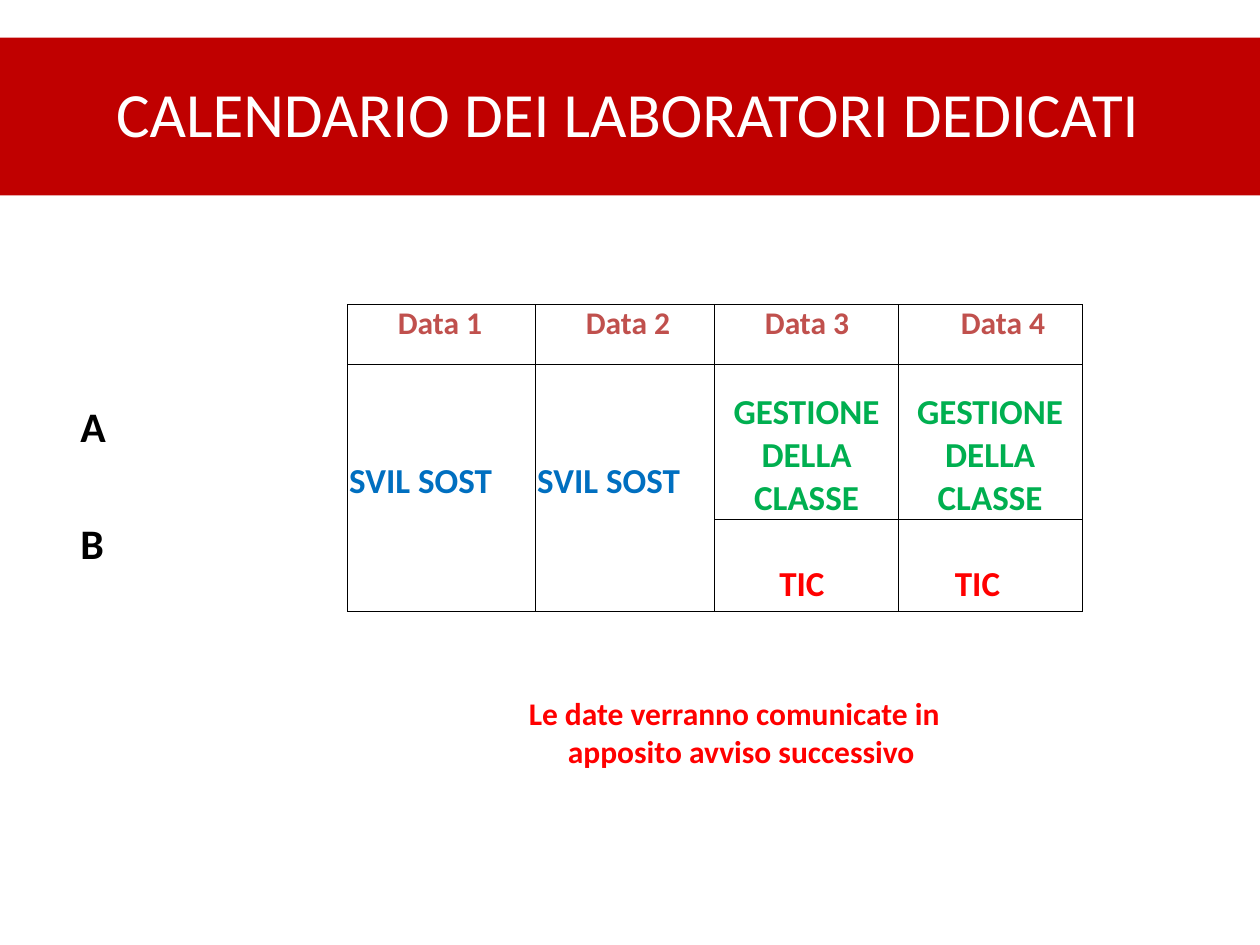
from dataclasses import dataclass

from lxml.etree import SubElement
from pptx import Presentation
from pptx.dml.color import RGBColor
from pptx.enum.shapes import MSO_SHAPE
from pptx.enum.text import MSO_ANCHOR, MSO_AUTO_SIZE, PP_ALIGN
from pptx.oxml.ns import qn
from pptx.table import Table, _Cell
from pptx.text.text import TextFrame
from pptx.util import Cm, Pt

DARK_RED = RGBColor(0xC0, 0x00, 0x00)
BRICK = RGBColor(0xC0, 0x50, 0x4D)
RED = RGBColor(0xFF, 0x00, 0x00)
BLUE = RGBColor(0x00, 0x6F, 0xC0)
GREEN = RGBColor(0x00, 0xAF, 0x50)
BLACK = RGBColor(0x00, 0x00, 0x00)
WHITE = RGBColor(0xFF, 0xFF, 0xFF)

PLAIN_TABLE_STYLE = "{2D5ABB26-0587-4C30-8999-92F81FD0307C}"
COLUMN_WIDTHS = (5.74, 3.79, 3.61, 3.7, 3.7)
ROW_HEIGHTS = (1.21, 1.78, 1.27, 1.85)


@dataclass(frozen=True)
class Entry:
    row: int
    column: int
    text: str
    size: int
    color: RGBColor
    left: float = 0
    top: float = 0
    rows: int = 1
    align: PP_ALIGN = PP_ALIGN.LEFT


ENTRIES = (
    Entry(0, 1, "Data 1", 18, BRICK, left=1.01),
    Entry(0, 2, "Data 2", 18, BRICK, left=1.01),
    Entry(0, 3, "Data 3", 18, BRICK, left=1.01),
    Entry(0, 4, "Data 4", 18, BRICK, left=1.26),
    Entry(1, 0, "A", 24, BLACK, left=0.35, top=0.76),
    Entry(3, 0, "B", 24, BLACK, left=0.35),
    *(Entry(1, column, "SVIL SOST", 20, BLUE, left=0.03, top=1.93, rows=3)
      for column in (1, 2)),
    *(Entry(1, column, "GESTIONE DELLA CLASSE", 20, GREEN, top=0.53, rows=2,
            align=PP_ALIGN.CENTER)
      for column in (3, 4)),
    Entry(3, 3, "TIC", 20, RED, left=1.3, top=0.87),
    Entry(3, 4, "TIC", 20, RED, left=1.14, top=0.87),
)


def set_values(target: object, values: dict) -> None:
    for name, value in values.items():
        setattr(target, name, value)


def write_text(frame: TextFrame, text: str, size: int, color: RGBColor,
               bold: bool = True, align: PP_ALIGN = PP_ALIGN.LEFT) -> None:
    para = frame.paragraphs[0]
    para.alignment = align
    span = para.add_run()
    span.text = text
    set_values(span.font, {"name": "Calibri", "size": Pt(size), "bold": bold})
    span.font.color.rgb = color


def clear_margins(target: object) -> None:
    set_values(target, {f"margin_{side}": 0
                        for side in ("left", "top", "right", "bottom")})


def add_borders(cell: _Cell, sides: tuple[str, ...]) -> None:
    properties = cell._tc.get_or_add_tcPr()
    for position, side in enumerate(sides):
        line = SubElement(properties, qn(f"a:ln{side}"), w=str(Pt(0.5)))
        fill = SubElement(line, qn("a:solidFill"))
        SubElement(fill, qn("a:srgbClr"), val=str(BLACK))
        properties.insert(position, line)


def fill_entry(table: Table, entry: Entry) -> None:
    cell = table.cell(entry.row, entry.column)
    if entry.rows > 1:
        cell.merge(table.cell(entry.row + entry.rows - 1, entry.column))
    set_values(cell, {"margin_left": Cm(entry.left), "margin_top": Cm(entry.top)})
    write_text(cell.text_frame, entry.text, entry.size, entry.color,
               align=entry.align)


def add_calendar(page) -> None:
    frame = page.shapes.add_table(
        len(ROW_HEIGHTS), len(COLUMN_WIDTHS), Cm(1.27), Cm(6.14),
        Cm(sum(COLUMN_WIDTHS)), Cm(sum(ROW_HEIGHTS)))
    table = frame.table
    set_values(table, {"first_row": False, "horz_banding": False})
    table._tbl.tblPr.find(qn("a:tableStyleId")).text = PLAIN_TABLE_STYLE
    for column, width in zip(table.columns, COLUMN_WIDTHS):
        column.width = Cm(width)
    for row, height in zip(table.rows, ROW_HEIGHTS):
        row.height = Cm(height)
        for index, cell in enumerate(row.cells):
            clear_margins(cell)
            cell.fill.background()
            add_borders(cell, ("L", "R", "T", "B") if index else ("R",))
    for entry in ENTRIES:
        fill_entry(table, entry)


def add_heading(page) -> None:
    band = page.shapes.add_shape(MSO_SHAPE.RECTANGLE, 0, Cm(0.76), Cm(25.4), Cm(3.18))
    band.shadow.inherit = False
    band.fill.solid()
    band.fill.fore_color.rgb = DARK_RED
    band.line.fill.background()
    title = page.shapes.title
    title._element.addprevious(band._element)
    set_values(title, {"left": Cm(2.34), "top": Cm(1.47),
                       "width": Cm(20.7), "height": Cm(1.6)})
    frame = title.text_frame
    clear_margins(frame)
    set_values(frame, {"word_wrap": True, "auto_size": MSO_AUTO_SIZE.NONE,
                       "vertical_anchor": MSO_ANCHOR.TOP, "margin_top": Cm(0.03)})
    write_text(frame, "CALENDARIO DEI LABORATORI DEDICATI", 36, WHITE, bold=False)


def add_notice(page) -> None:
    box = page.shapes.add_textbox(Cm(10.64), Cm(13.97), Cm(8.33), Cm(1.6))
    frame = box.text_frame
    clear_margins(frame)
    set_values(frame, {"word_wrap": True, "margin_top": Cm(0.03)})
    write_text(frame, "Le date verranno comunicate in apposito avviso successivo",
               18, RED)
    properties = frame.paragraphs[0]._p.get_or_add_pPr()
    properties.set("marL", str(Cm(0.81)))
    properties.set("indent", str(Cm(-0.79)))


def main() -> None:
    deck = Presentation()
    set_values(deck, {"slide_width": Cm(25.4), "slide_height": Cm(19.05)})
    page = deck.slides.add_slide(deck.slide_layouts[5])
    add_heading(page)
    add_calendar(page)
    add_notice(page)
    deck.save("out.pptx")


if __name__ == "__main__":
    main()
